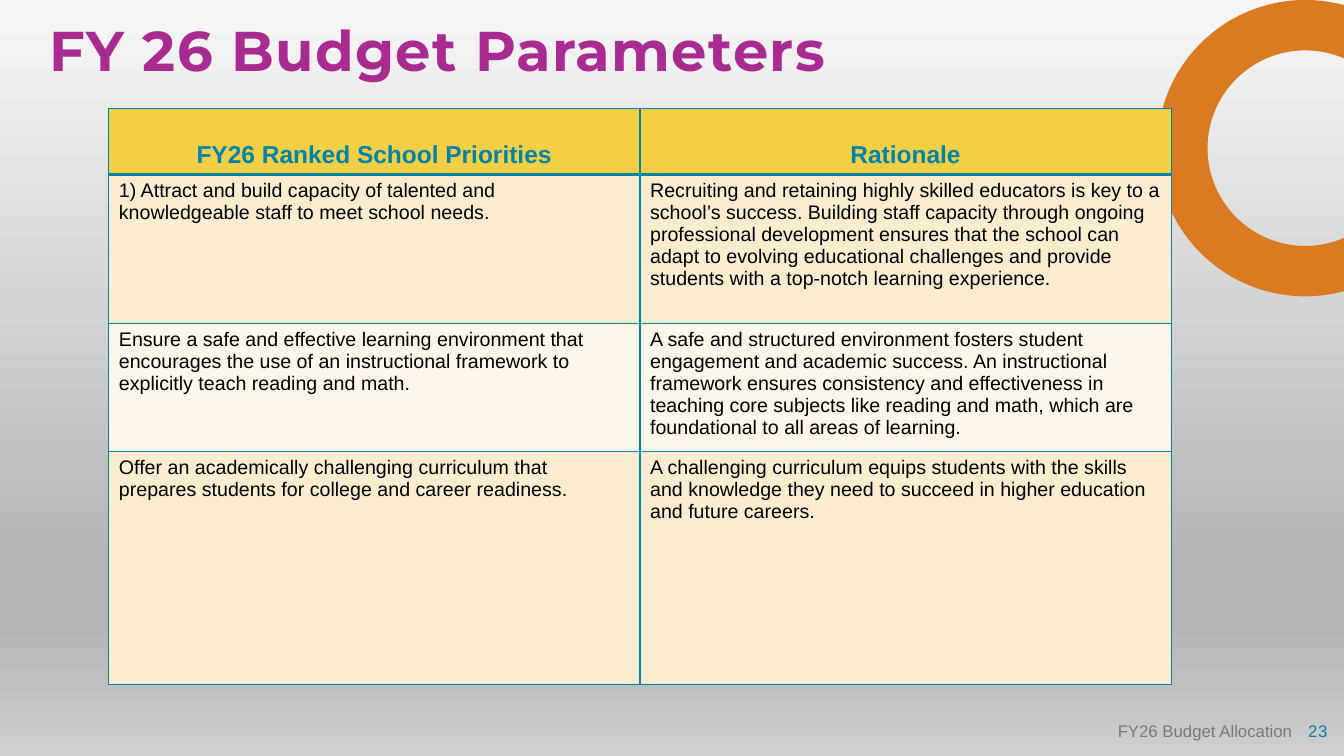
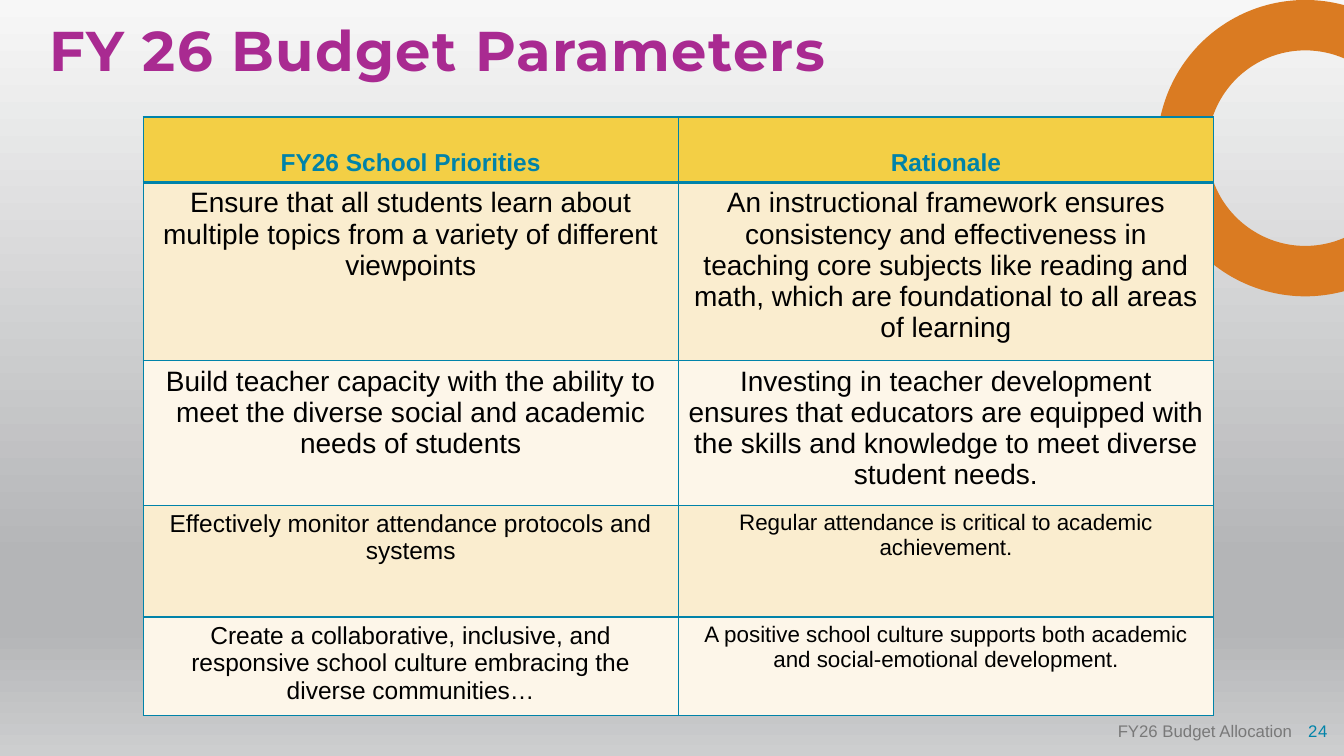
import math

import lxml.etree
import pptx
import pptx.dml.color
import pptx.enum.text
import pptx.oxml.ns
import pptx.util

Inches = pptx.util.Inches
Pt = pptx.util.Pt
RGBColor = pptx.dml.color.RGBColor
Align = pptx.enum.text.PP_ALIGN
Anchor = pptx.enum.text.MSO_ANCHOR
qn = pptx.oxml.ns.qn

PURPLE = RGBColor(0xA9, 0x2A, 0x91)
TEAL = RGBColor(0x00, 0x83, 0xA9)
ORANGE = RGBColor(0xDA, 0x7B, 0x22)
YELLOW = RGBColor(0xF3, 0xCF, 0x45)
CREAM = RGBColor(0xFA, 0xED, 0xCF)
PALE_CREAM = RGBColor(0xFD, 0xF6, 0xE9)
GREY = RGBColor(0x79, 0x79, 0x79)
BLACK = RGBColor(0, 0, 0)
BACKGROUND_STOPS = [
    (0, RGBColor(0xF7, 0xF7, 0xF7)),
    (74, RGBColor(0xB4, 0xB5, 0xB7)),
    (83, RGBColor(0xB4, 0xB5, 0xB7)),
    (100, RGBColor(0xCD, 0xCE, 0xCF)),
]

SLIDE_WIDTH, SLIDE_HEIGHT = 40 / 3, 7.5
RING_X, RING_Y, RING_OUTER, RING_INNER = 12.95, 1.47, 1.47, 0.97
HEADER_HEIGHT, HEADER_SIZE = 0.65, 17.5
BODY_FONT = "Arial"
TITLE = "FY 26 Budget Parameters"
FOOTER = "FY26 Budget Allocation"

# Each row: height, then (text, size) for each column.
SLIDES = [
    {
        "number": "23",
        "left": 1.08, "top": 1.08, "column_width": 5.27,
        "align": Align.LEFT,
        "header": ("FY26 Ranked School Priorities", "Rationale"),
        "rows": [
            (1.48,
             ("1) Attract and build capacity of talented and knowledgeable staff "
              "to meet school needs.", 14),
             ("Recruiting and retaining highly skilled educators is key to a school’s "
              "success. Building staff capacity through ongoing professional development "
              "ensures that the school can adapt to evolving educational challenges and "
              "provide students with a top-notch learning experience.", 14)),
            (1.2,
             ("Ensure a safe and effective learning environment that encourages the use "
              "of an instructional framework to explicitly teach reading and math.", 14),
             ("A safe and structured environment fosters student engagement and academic "
              "success. An instructional framework ensures consistency and effectiveness "
              "in teaching core subjects like reading and math, which are foundational "
              "to all areas of learning.", 14)),
            (2.31,
             ("Offer an academically challenging curriculum that prepares students for "
              "college and career readiness.", 14),
             ("A challenging curriculum equips students with the skills and knowledge "
              "they need to succeed in higher education and future careers.", 14)),
        ],
    },
    {
        "number": "24",
        "left": 1.42, "top": 1.16, "column_width": 5.31,
        "align": Align.CENTER,
        "header": ("FY26 School Priorities", "Rationale"),
        "rows": [
            (1.48,
             ("Ensure that all students learn about multiple topics from a variety of "
              "different viewpoints", 20),
             ("An instructional framework ensures consistency and effectiveness in "
              "teaching core subjects like reading and math, which are foundational to "
              "all areas of learning", 20)),
            (1.2,
             ("Build teacher capacity with the ability to meet the diverse social and "
              "academic needs of students", 20),
             ("Investing in teacher development ensures that educators are equipped with "
              "the skills and knowledge to meet diverse student needs.", 20)),
            (1.11,
             ("Effectively monitor attendance protocols and systems", 17.5),
             ("Regular attendance is critical to academic achievement.", 16)),
            (0.91,
             ("Create a collaborative, inclusive, and responsive school culture "
              "embracing the diverse communities…", 17.5),
             ("A positive school culture supports both academic and social-emotional "
              "development.", 16)),
        ],
    },
]


def style_paragraph(para, size, color, align, bold=False, name=BODY_FONT, spacing=0):
    """Set one font for the whole paragraph; spacing is in points between letters."""
    para.alignment = align
    font = para.font
    font.name, font.size, font.bold = name, Pt(size), bold
    font.color.rgb = color
    if spacing:
        para._p.pPr.find(qn("a:defRPr")).set("spc", str(int(spacing * 100)))


def add_text(page, text, left, top, width, height, side_inset=0, anchor=Anchor.TOP, **style):
    box = page.shapes.add_textbox(Inches(left), Inches(top), Inches(width), Inches(height))
    frame = box.text_frame
    frame.word_wrap = True
    frame.vertical_anchor = anchor
    frame.margin_left = frame.margin_right = Inches(side_inset)
    frame.margin_top = frame.margin_bottom = 0
    para = frame.paragraphs[0]
    para.text = text
    style_paragraph(para, **style)
    return para


def paint_background(page):
    fill = page.background.fill
    fill.gradient()
    fill.gradient_angle = 270
    stops = page.element.find(".//" + qn("a:gsLst"))
    for stop in list(stops):
        stops.remove(stop)
    for percent, color in BACKGROUND_STOPS:
        stop = lxml.etree.SubElement(stops, qn("a:gs"), pos=str(percent * 1000))
        lxml.etree.SubElement(stop, qn("a:srgbClr"), val=str(color))


def add_ring(page):
    """Add the ring cut off by the right edge, drawn as two true arcs."""
    left, top = RING_X - RING_OUTER, RING_Y - RING_OUTER
    right, bottom = SLIDE_WIDTH, RING_Y + RING_OUTER
    corners = [(Inches(x), Inches(y)) for x, y in
               ((left, top), (right, top), (right, bottom), (left, bottom))]
    builder = page.shapes.build_freeform(*corners[0])
    builder.add_line_segments(corners[1:], close=True)
    ring = builder.convert_to_shape()
    ring.shadow.inherit = False
    ring.fill.solid()
    ring.fill.fore_color.rgb = ORANGE
    ring.line.fill.background()

    outline = ring._element.find(".//" + qn("a:pathLst"))[0]
    for step in list(outline):
        outline.remove(step)
    # The outer arc runs from top to bottom, the inner one back up.
    for radius, turn, move in ((RING_OUTER, -1, "a:moveTo"), (RING_INNER, 1, "a:lnTo")):
        half_gap = math.acos((right - RING_X) / radius)
        start_y = RING_Y + turn * radius * math.sin(half_gap)
        step = lxml.etree.SubElement(outline, qn(move))
        lxml.etree.SubElement(step, qn("a:pt"), x=str(Inches(right - left)),
                              y=str(Inches(start_y - top)))
        degrees = math.degrees(half_gap)
        lxml.etree.SubElement(
            outline, qn("a:arcTo"), wR=str(Inches(radius)), hR=str(Inches(radius)),
            stAng=str(round(turn * degrees % 360 * 60000)),
            swAng=str(round(turn * (360 - 2 * degrees) * 60000)))
    lxml.etree.SubElement(outline, qn("a:close"))


def set_borders(cell, top=1, bottom=1):
    properties = cell._tc.get_or_add_tcPr()
    for side, width in (("L", 1), ("R", 1), ("T", top), ("B", bottom)):
        line = lxml.etree.SubElement(properties, qn("a:ln" + side), w=str(Pt(width)))
        fill = lxml.etree.SubElement(line, qn("a:solidFill"))
        lxml.etree.SubElement(fill, qn("a:srgbClr"), val=str(TEAL))


def fill_cell(cell, text, background, **style):
    cell.fill.solid()
    cell.fill.fore_color.rgb = background
    para = cell.text_frame.paragraphs[0]
    para.text = text
    style_paragraph(para, **style)
    # Row heights are measured with the font of the run and of the paragraph end.
    para.runs[0].font.name = BODY_FONT
    ending = lxml.etree.SubElement(para._p, qn("a:endParaRPr"), sz=str(int(style["size"] * 100)))
    lxml.etree.SubElement(ending, qn("a:latin"), typeface=BODY_FONT)


def add_priorities_table(page, content):
    rows = content["rows"]
    heights = [HEADER_HEIGHT] + [row[0] for row in rows]
    columns = len(content["header"])
    table = page.shapes.add_table(
        len(heights), columns, Inches(content["left"]), Inches(content["top"]),
        Inches(columns * content["column_width"]), Inches(sum(heights))).table
    table.horz_banding = False
    for row, height in zip(table.rows, heights):
        row.height = Inches(height)

    for column, heading in enumerate(content["header"]):
        cell = table.cell(0, column)
        set_borders(cell, bottom=3)
        cell.vertical_anchor = Anchor.BOTTOM
        cell.margin_bottom = Inches(0.06)
        fill_cell(cell, heading, YELLOW, size=HEADER_SIZE, color=TEAL,
                  align=Align.CENTER, bold=True)

    for index, (_, *entries) in enumerate(rows, start=1):
        for column, (text, size) in enumerate(entries):
            cell = table.cell(index, column)
            set_borders(cell, top=3 if index == 1 else 1)
            fill_cell(cell, text, CREAM if index % 2 else PALE_CREAM,
                      size=size, color=BLACK, align=content["align"])


def add_slide(deck, content):
    page = deck.slides.add_slide(deck.slide_layouts[6])
    paint_background(page)
    add_ring(page)
    title = add_text(page, TITLE, 0.49, 0.23, 8.49, 0.75, size=40, color=PURPLE,
                     align=Align.LEFT, bold=True, name="Montserrat", spacing=1)
    title.line_spacing = 0.9
    add_priorities_table(page, content)
    add_text(page, content["number"], 10.17, 7.05, 3, 0.4, anchor=Anchor.MIDDLE,
             size=12, color=TEAL, align=Align.RIGHT, spacing=0.5)
    add_text(page, FOOTER, 10.79, 7.05, 2.13, 0.4, side_inset=0.1, anchor=Anchor.MIDDLE,
             size=12, color=GREY, align=Align.RIGHT)


def main():
    deck = pptx.Presentation()
    deck.slide_width, deck.slide_height = Inches(SLIDE_WIDTH), Inches(SLIDE_HEIGHT)
    for content in SLIDES:
        add_slide(deck, content)
    deck.save("out.pptx")


if __name__ == "__main__":
    main()
